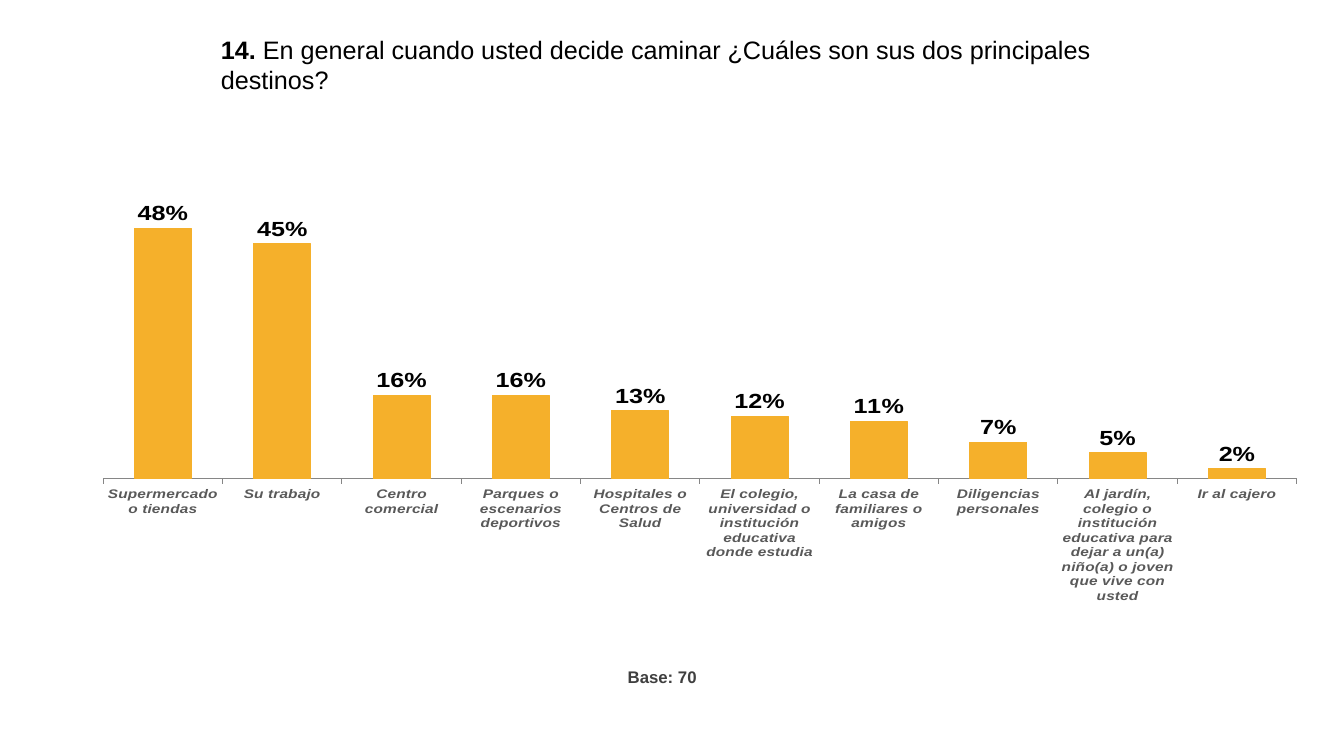
from lxml.etree import SubElement
from pptx import Presentation
from pptx.chart.data import CategoryChartData
from pptx.dml.color import RGBColor
from pptx.enum.chart import XL_CHART_TYPE as ChartType, XL_LABEL_POSITION as LabelPos
from pptx.enum.chart import XL_TICK_LABEL_POSITION as TickLabelPos, XL_TICK_MARK as TickMark
from pptx.enum.text import MSO_ANCHOR, MSO_AUTO_SIZE, PP_ALIGN
from pptx.oxml.ns import qn
from pptx.util import Cm, Pt

TITLE = [("14. ", True), ("En general cuando usted decide caminar ¿Cuáles son sus dos principales destinos?", False)]
BASE = [("Base: 70", True)]
DESTINATIONS = [
    ("Supermercado o tiendas", 0.48),
    ("Su trabajo", 0.45),
    ("Centro comercial", 0.16),
    ("Parques o escenarios deportivos", 0.16),
    ("Hospitales o Centros de Salud", 0.13),
    ("El colegio, universidad o institución educativa donde estudia", 0.12),
    ("La casa de familiares o amigos", 0.11),
    ("Diligencias personales", 0.07),
    ("Al jardín, colegio o institución educativa para dejar a un(a) niño(a) o joven que vive con usted", 0.05),
    ("Ir al cajero", 0.02),
]
PLOT = {"x": 0, "y": 0.09, "w": 1, "h": 0.82}

FONT = "Arial"
BLACK = RGBColor(0x00, 0x00, 0x00)
DARK = RGBColor(0x3F, 0x3F, 0x3F)
GREY = RGBColor(0x59, 0x59, 0x59)
AXIS = RGBColor(0x86, 0x86, 0x86)
AMBER = RGBColor(0xF5, 0xB0, 0x2B)


def style(font, size, color, bold=False, italic=False):
    font.name, font.size, font.bold, font.italic = FONT, Pt(size), bold, italic
    font.color.rgb = color


def write(tf, runs, size, color, align=PP_ALIGN.LEFT, spacing=1.0, wrap=True):
    tf.word_wrap = wrap
    tf.auto_size = MSO_AUTO_SIZE.SHAPE_TO_FIT_TEXT
    tf.vertical_anchor = MSO_ANCHOR.TOP
    p = tf.paragraphs[0]
    p.alignment, p.line_spacing = align, spacing
    p.space_before = Pt(0)
    for text, bold in runs:
        r = p.add_run()
        r.text = text
        style(r.font, size, color, bold)


def place_plot(chart):
    plot_area = chart.plots[0]._element.getparent()
    for old in plot_area.findall(qn("c:layout")):
        plot_area.remove(old)
    layout = SubElement(plot_area, qn("c:layout"))
    plot_area.insert(0, layout)
    manual = SubElement(layout, qn("c:manualLayout"))
    settings = {"layoutTarget": "inner", "xMode": "edge", "yMode": "edge", **PLOT}
    for name, value in settings.items():
        SubElement(manual, qn(f"c:{name}")).set("val", str(value))


def add_destinations(s):
    data = CategoryChartData(number_format="0%")
    data.categories = [name for name, _ in DESTINATIONS]
    data.add_series("Series 1", [share for _, share in DESTINATIONS])
    chart = s.shapes.add_chart(ChartType.COLUMN_CLUSTERED, Cm(2.59), Cm(3.3), Cm(30.1), Cm(11.89), data).chart
    chart.has_legend = chart.has_title = False
    style(chart.font, 18, BLACK)
    place_plot(chart)

    plot = chart.plots[0]
    plot.gap_width = 110
    plot.vary_by_categories = False
    bars = plot.series[0].format
    bars.fill.solid()
    bars.fill.fore_color.rgb = AMBER
    bars.line.color.rgb = AMBER
    bars.line.width = Pt(0.75)
    plot.has_data_labels = True
    labels = plot.data_labels
    labels.show_value = True
    labels.position = LabelPos.OUTSIDE_END
    labels.number_format, labels.number_format_is_linked = "0%", False
    style(labels.font, 18, BLACK, bold=True)

    cat = chart.category_axis
    cat.major_tick_mark = TickMark.OUTSIDE
    cat.tick_label_position = TickLabelPos.LOW
    cat.format.line.color.rgb = AXIS
    cat.format.line.width = Pt(0.75)
    style(cat.tick_labels.font, 11, GREY, bold=True, italic=True)

    val = chart.value_axis
    val.visible = val.has_major_gridlines = False
    val.minimum_scale, val.maximum_scale = 0, 0.6


def main():
    prs = Presentation()
    prs.slide_width, prs.slide_height = Cm(33.87), Cm(19.05)
    s = prs.slides.add_slide(prs.slide_layouts[5])
    add_destinations(s)

    base = s.shapes.add_textbox(Cm(15.32), Cm(16.76), Cm(2.49), Cm(0.64))
    write(base.text_frame, BASE, 12, DARK, align=PP_ALIGN.RIGHT, spacing=0.83, wrap=False)

    title = s.shapes.title
    title.left, title.top, title.width, title.height = Cm(5.31), Cm(0.74), Cm(22.91), Cm(1.02)
    write(title.text_frame, TITLE, 18, BLACK)
    prs.save("out.pptx")


if __name__ == "__main__":
    main()
